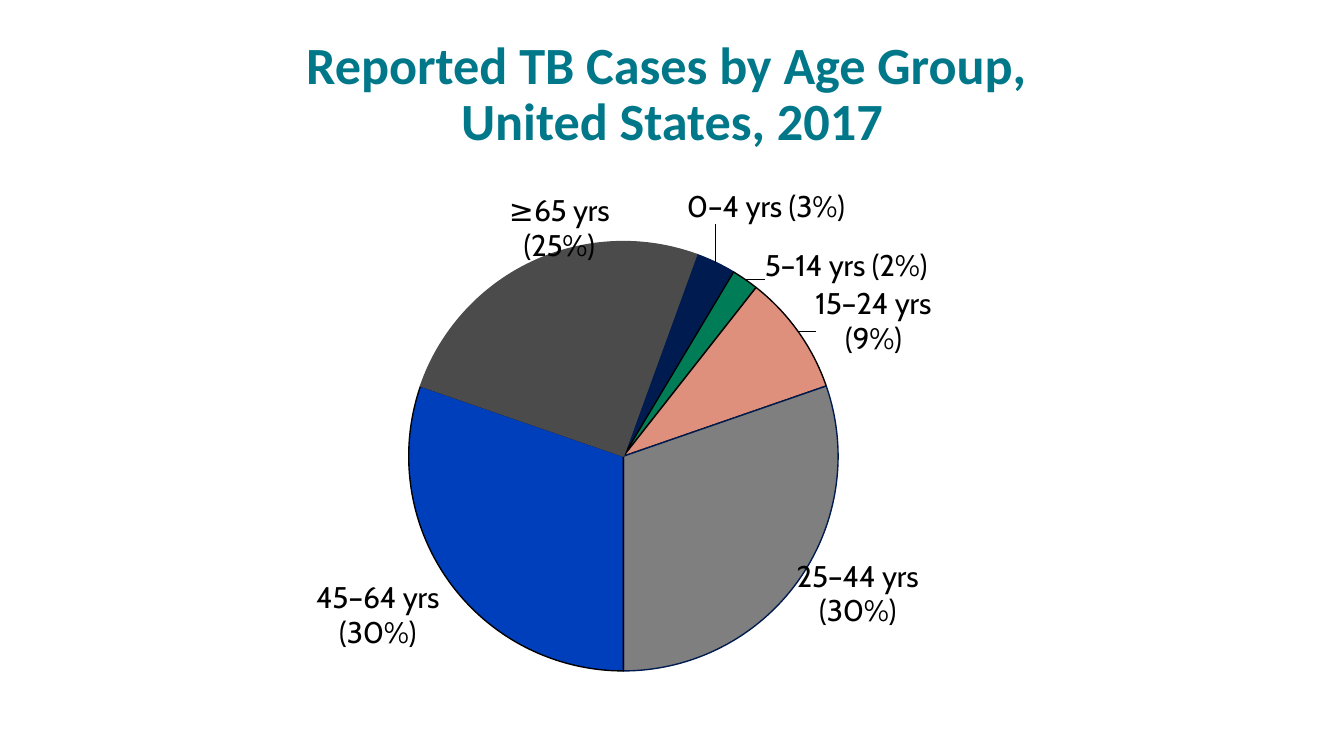
"""Build a slide with a pie chart of reported TB cases by age group."""
import dataclasses

import lxml.etree
import pptx
import pptx.chart.data
import pptx.dml.color
import pptx.enum.chart
import pptx.enum.text
import pptx.oxml.ns
import pptx.util

COLORS = {
    "title": "00788A", "text": "000000", "navy": "001B50", "green": "007D57",
    "salmon": "DF907D", "gray": "7F7F7F", "blue": "003FBC", "charcoal": "4B4B4B",
}
WIDTH = pptx.util.Inches(10)
HEIGHT = WIDTH * 9 // 16


@dataclasses.dataclass(frozen=True)
class AgeGroup:
    """One slice, with its label shift in percent of the chart's size."""

    name: str
    share: float
    fill: str
    line: str
    dx: float
    dy: float


GROUPS = [
    AgeGroup("0–4 yrs", 0.03, "navy", "navy", -3.6, -5.8),
    AgeGroup("5–14 yrs", 0.02, "green", "text", 1.7, 2),
    AgeGroup("15–24 yrs", 0.09, "salmon", "text", 1.2, 5.6),
    AgeGroup("25–44 yrs", 0.30, "gray", "navy", -0.9, -5),
    AgeGroup("45–64 yrs", 0.30, "blue", "text", -0.3, -1),
    AgeGroup("≥65 yrs", 0.25, "charcoal", "charcoal", 9.2, 1.6),
]


def color(name: str) -> pptx.dml.color.RGBColor:
    """Return the named colour."""
    return pptx.dml.color.RGBColor.from_string(COLORS[name])


def place(sp, left: float, top: float, width: float, height: float) -> None:
    """Place a shape by percent of the slide's size."""
    sp.left, sp.width = int(left * WIDTH / 100), int(width * WIDTH / 100)
    sp.top, sp.height = int(top * HEIGHT / 100), int(height * HEIGHT / 100)


def make_layout(modes: dict[str, str], **percents: float) -> lxml.etree._Element:
    """Return a manual chart layout from modes and percent lengths."""
    layout = lxml.etree.Element(pptx.oxml.ns.qn("c:layout"))
    manual = lxml.etree.SubElement(layout, pptx.oxml.ns.qn("c:manualLayout"))
    lengths = {tag: f"{value / 100:.3f}" for tag, value in percents.items()}
    for tag, value in {**modes, **lengths}.items():
        lxml.etree.SubElement(manual, pptx.oxml.ns.qn(f"c:{tag}")).set("val", value)
    return layout


def add_title(slide, lines: list[str]) -> None:
    """Fill the title placeholder, one run a line."""
    sp = slide.shapes.title
    place(sp, 5, 4.1, 90, 16.7)
    tf = sp.text_frame
    tf.auto_size = pptx.enum.text.MSO_AUTO_SIZE.NONE
    tf.vertical_anchor = pptx.enum.text.MSO_ANCHOR.BOTTOM
    p = tf.paragraphs[0]
    p.alignment = pptx.enum.text.PP_ALIGN.CENTER
    p.line_spacing = pptx.util.Pt(30)
    for i, line in enumerate(lines):
        if i:
            p.add_line_break()
        r = p.add_run()
        r.text = line
        r.font.name, r.font.size, r.font.bold = "Calibri", pptx.util.Pt(28), True
        r.font.color.rgb = color("title")


def style_font(font) -> None:
    """Apply the label font."""
    font.name, font.size, font.bold = "Cabin", pptx.util.Pt(16), False
    font.color.rgb = color("text")


def style_slice(point, group: AgeGroup) -> None:
    """Colour a slice and write its label."""
    fmt = point.format
    fmt.fill.solid()
    fmt.fill.fore_color.rgb = color(group.fill)
    fmt.line.color.rgb = color(group.line)
    fmt.line.width = pptx.util.Pt(0.75)
    label = point.data_label
    r = label.text_frame.paragraphs[0].add_run()
    r.text = f"{group.name} ({group.share:.0%})"
    style_font(r.font)
    label.position = pptx.enum.chart.XL_LABEL_POSITION.OUTSIDE_END
    idx = r._r.xpath("ancestor::c:dLbl/c:idx")[0]
    idx.addnext(make_layout({}, x=group.dx, y=group.dy))


def add_pie(slide, groups: list[AgeGroup]) -> None:
    """Add the pie chart with labelled slices."""
    data = pptx.chart.data.CategoryChartData(number_format="0%")
    data.categories = [g.name for g in groups]
    data.add_series("Series 1", [g.share for g in groups])
    frame = slide.shapes.add_chart(pptx.enum.chart.XL_CHART_TYPE.PIE, 0, 0, WIDTH, HEIGHT, data)
    place(frame, 14.5, 22.9, 66.3, 69.7)
    chart = frame.chart
    chart.has_title = chart.has_legend = False
    style_font(chart.font)
    plot = chart.plots[0]
    plot.vary_by_categories = True
    series = plot.series[0]
    labels = series.data_labels
    labels.show_value = labels.show_category_name = True
    labels.number_format, labels.number_format_is_linked = "0%", False
    labels.position = pptx.enum.chart.XL_LABEL_POSITION.OUTSIDE_END
    style_font(labels.font)
    for i, group in enumerate(groups):
        style_slice(series.points[i], group)
    area = chart._chartSpace.chart.plotArea
    for old in area.findall(pptx.oxml.ns.qn("c:layout")):
        area.remove(old)
    modes = {"layoutTarget": "inner", "xMode": "edge", "yMode": "edge"}
    area.insert(0, make_layout(modes, x=24, y=9.7, w=48.2, h=88.1))
    pie = area.find(pptx.oxml.ns.qn("c:pieChart"))
    angle = pie.find(pptx.oxml.ns.qn("c:firstSliceAng"))
    if angle is None:
        angle = lxml.etree.SubElement(pie, pptx.oxml.ns.qn("c:firstSliceAng"))
    angle.set("val", "20")


def main() -> None:
    """Build and save the slide."""
    prs = pptx.Presentation()
    prs.slide_width, prs.slide_height = WIDTH, HEIGHT
    slide = prs.slides.add_slide(prs.slide_layouts[5])
    add_title(slide, ["Reported TB Cases by Age Group, ", "United States, 2017"])
    add_pie(slide, GROUPS)
    prs.save("out.pptx")


if __name__ == "__main__":
    main()
